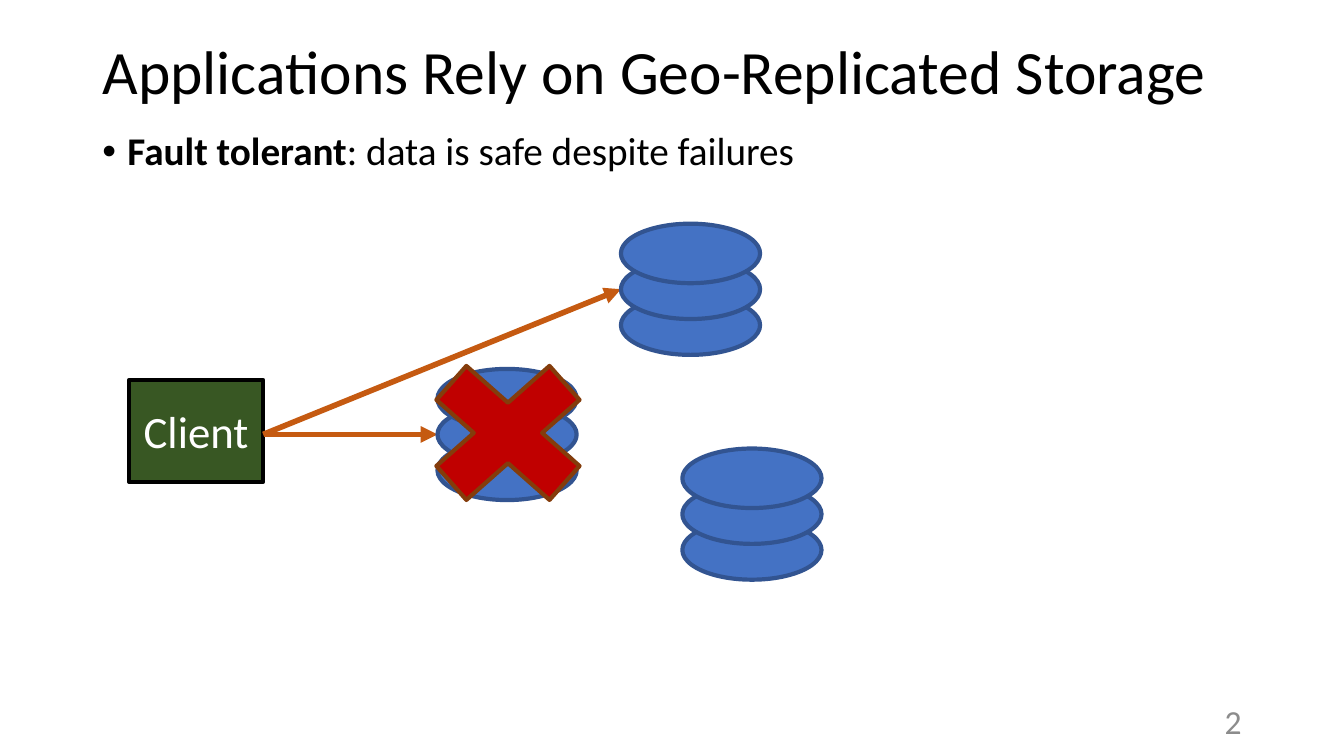
from dataclasses import dataclass

from lxml import etree
from pptx import Presentation
from pptx.dml.color import RGBColor
from pptx.enum.shapes import MSO_CONNECTOR, MSO_SHAPE
from pptx.enum.text import MSO_ANCHOR, MSO_AUTO_SIZE, PP_ALIGN
from pptx.oxml.ns import qn
from pptx.util import Pt

STRAIGHT = MSO_CONNECTOR.STRAIGHT
RECTANGLE, OVAL, CROSS = MSO_SHAPE.RECTANGLE, MSO_SHAPE.OVAL, MSO_SHAPE.MATH_MULTIPLY
LEFT, CENTER, RIGHT = PP_ALIGN.LEFT, PP_ALIGN.CENTER, PP_ALIGN.RIGHT
TOP, MIDDLE = MSO_ANCHOR.TOP, MSO_ANCHOR.MIDDLE
NO_AUTOFIT = MSO_AUTO_SIZE.NONE
TITLE_ONLY = 5


@dataclass(frozen=True)
class Theme:
    font: str = "Calibri"
    text: str = "000000"
    muted: str = "8C8C8C"
    light: str = "FFFFFF"
    client: str = "385723"
    disk: str = "4472C4"
    disk_edge: str = "325491"
    request: str = "C55A11"
    failure: str = "C00000"
    failure_edge: str = "843C0B"
    title_size: int = 44
    client_size: int = 32
    body_size: int = 28
    number_size: int = 24
    outline: int = 3
    arrow: int = 4


class SlideBuilder:
    DISK_WIDTH, DISK_HEIGHT, DISK_STEP = 99.4, 42.5, 25.6

    def __init__(self, slide, theme):
        self.slide = slide
        self.theme = theme

    def set_text(self, shape, runs, size, color, align=LEFT, anchor=MIDDLE):
        """Fill a shape with one paragraph of (text, bold) runs."""
        frame = shape.text_frame
        frame.word_wrap = True
        frame.auto_size = NO_AUTOFIT
        frame.vertical_anchor = anchor
        paragraph = frame.paragraphs[0]
        paragraph.alignment = align
        for text, bold in runs:
            run = paragraph.add_run()
            run.text = text
            run.font.name = self.theme.font
            run.font.size = Pt(size)
            run.font.bold = bold
            run.font.color.rgb = RGBColor.from_string(color)
        return paragraph

    def title(self, text, left, top, width, height):
        heading = self.slide.shapes.title
        heading.left, heading.top = Pt(left), Pt(top)
        heading.width, heading.height = Pt(width), Pt(height)
        paragraph = self.set_text(heading, [(text, False)], self.theme.title_size, self.theme.text)
        paragraph.line_spacing = 0.9

    def text(self, runs, box, size, color, **layout):
        label = self.slide.shapes.add_textbox(*map(Pt, box))
        return self.set_text(label, runs, size, color, **layout)

    def bullet(self, runs, box):
        paragraph = self.text(runs, box, self.theme.body_size, self.theme.text, anchor=TOP)
        paragraph.line_spacing = 0.9
        paragraph.space_before = Pt(10)
        properties = paragraph._p.get_or_add_pPr()
        properties.set("marL", str(Pt(18)))
        properties.set("indent", str(Pt(-18)))
        etree.SubElement(properties, qn("a:buFont"), typeface="Arial")
        etree.SubElement(properties, qn("a:buChar"), char="•")

    def shape(self, kind, box, fill, edge, parent=None):
        shapes = (parent or self.slide).shapes
        shape = shapes.add_shape(kind, *map(Pt, box))
        shape.shadow.inherit = False
        shape.fill.solid()
        shape.fill.fore_color.rgb = RGBColor.from_string(fill)
        shape.line.color.rgb = RGBColor.from_string(edge)
        shape.line.width = Pt(self.theme.outline)
        return shape

    def replica(self, left, top):
        """Stack three disks, the lowest at the back."""
        stack = self.slide.shapes.add_group_shape()
        for level in (2, 1, 0):
            box = (left, top + level * self.DISK_STEP, self.DISK_WIDTH, self.DISK_HEIGHT)
            self.shape(OVAL, box, self.theme.disk, self.theme.disk_edge, stack)

    def arrow(self, start, end):
        connector = self.slide.shapes.add_connector(STRAIGHT, *map(Pt, (*start, *end)))
        connector.line.color.rgb = RGBColor.from_string(self.theme.request)
        connector.line.width = Pt(self.theme.arrow)
        properties = connector._element.spPr
        line = properties.find(qn("a:ln"))
        etree.SubElement(line, qn("a:tailEnd"), type="triangle")
        etree.SubElement(properties, qn("a:effectLst"))


def main():
    presentation = Presentation()
    presentation.slide_width, presentation.slide_height = Pt(960), Pt(540)
    slide = presentation.slides.add_slide(presentation.slide_layouts[TITLE_ONLY])
    theme = Theme()
    builder = SlideBuilder(slide, theme)

    # Title, statement and slide number
    builder.title("Applications Rely on Geo-Replicated Storage", 66, 1.4, 828, 104.4)
    builder.bullet([("Fault tolerant", True), (": data is safe despite failures", False)],
                   (66, 90.7, 828, 37.4))
    builder.text([("2", False)], (678, 500.5, 216, 28.8),
                 theme.number_size, theme.muted, align=RIGHT)

    # Client and its requests
    request_start = (188, 310.3)
    builder.replica(487.4, 320.4)
    builder.arrow(request_start, (312.5, 310.3))
    client = builder.shape(RECTANGLE, (92.2, 271.4, 95.8, 72.7), theme.client, theme.text)
    builder.set_text(client, [("Client", False)], theme.client_size, theme.light, align=CENTER)
    builder.arrow(request_start, (443.5, 206.6))

    # Reachable replica and failed replica
    builder.replica(443.5, 159.8)
    builder.replica(312.5, 263.5)
    builder.shape(CROSS, (285.1, 240.5, 155.5, 137.5), theme.failure, theme.failure_edge)

    presentation.save("out.pptx")


if __name__ == "__main__":
    main()
